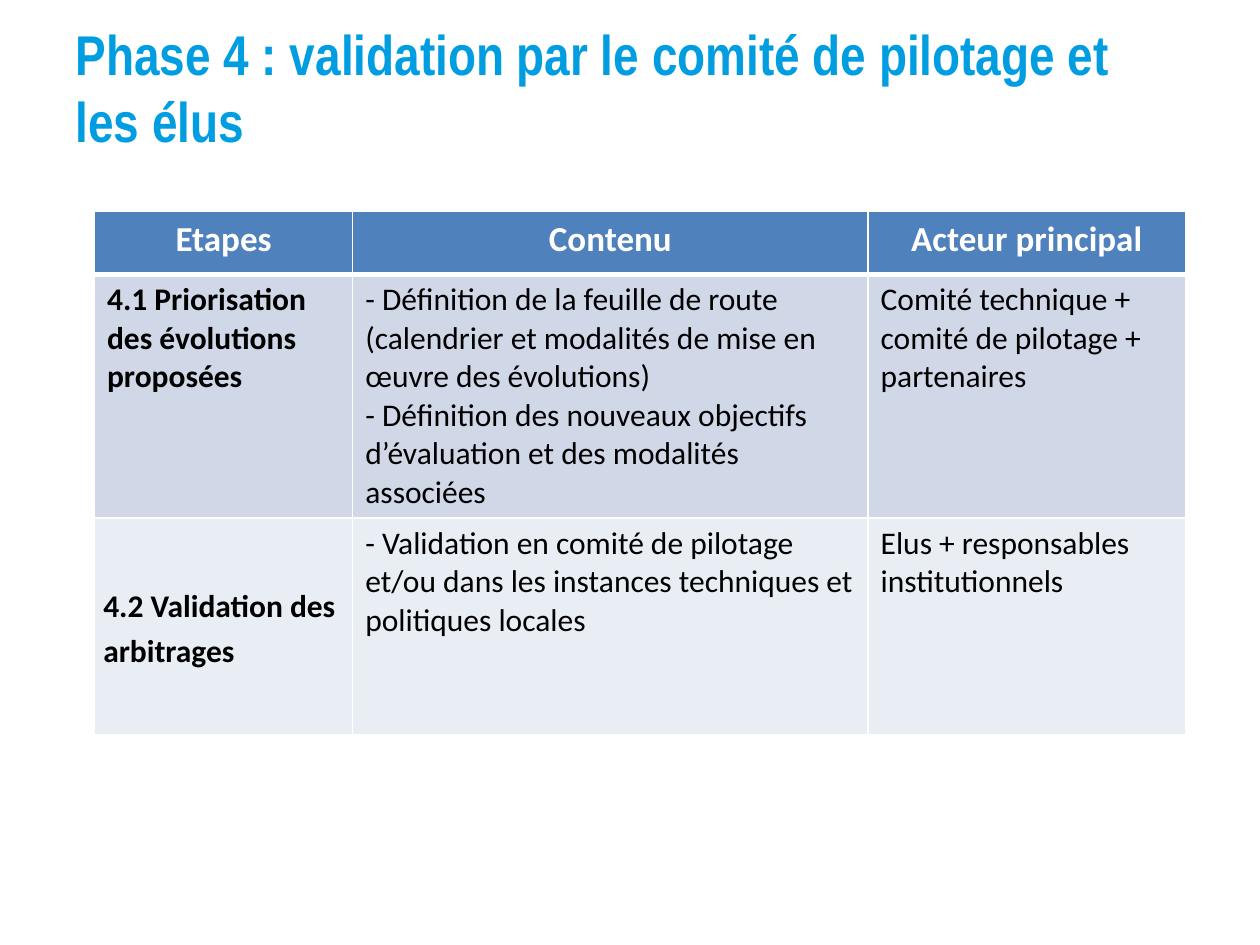
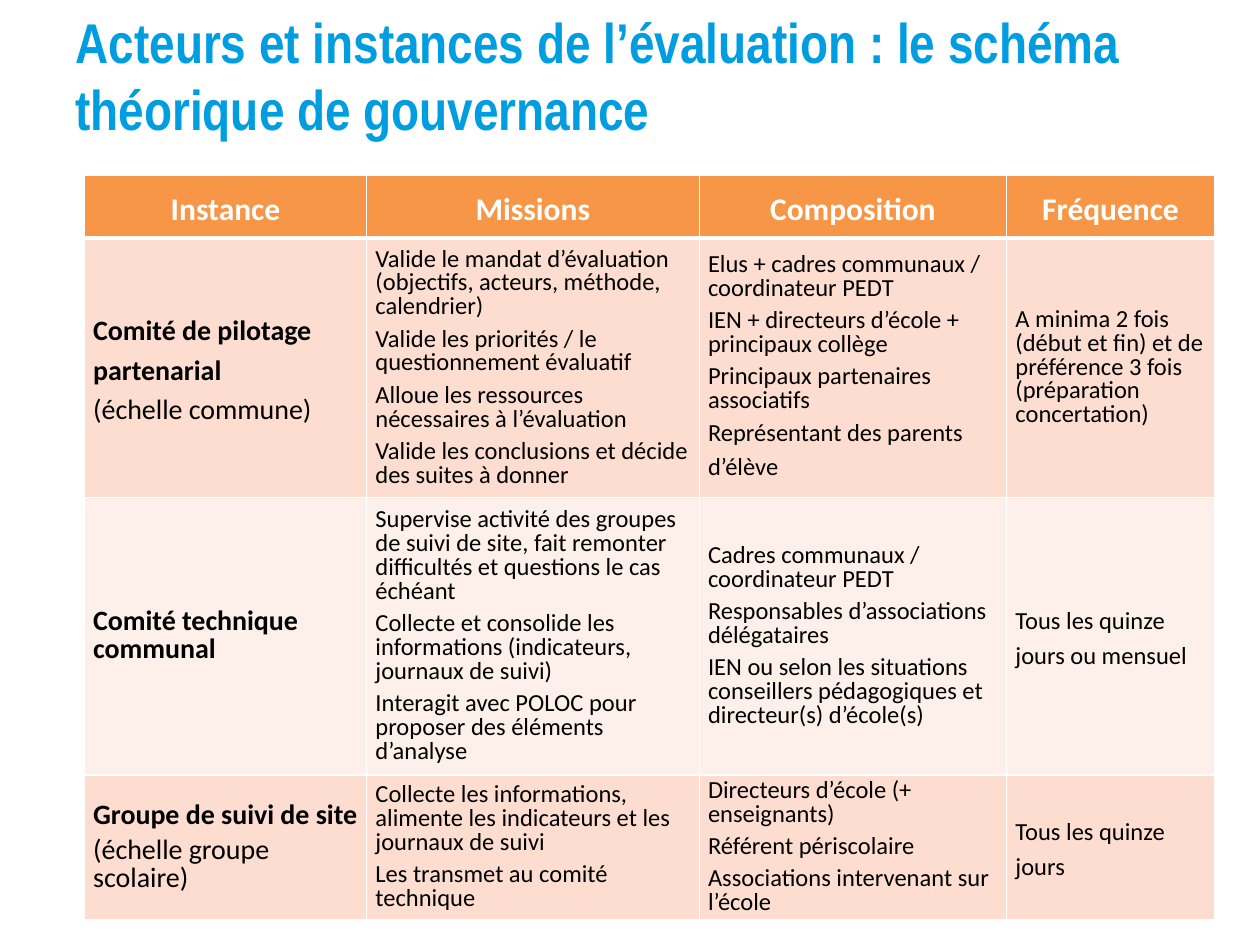
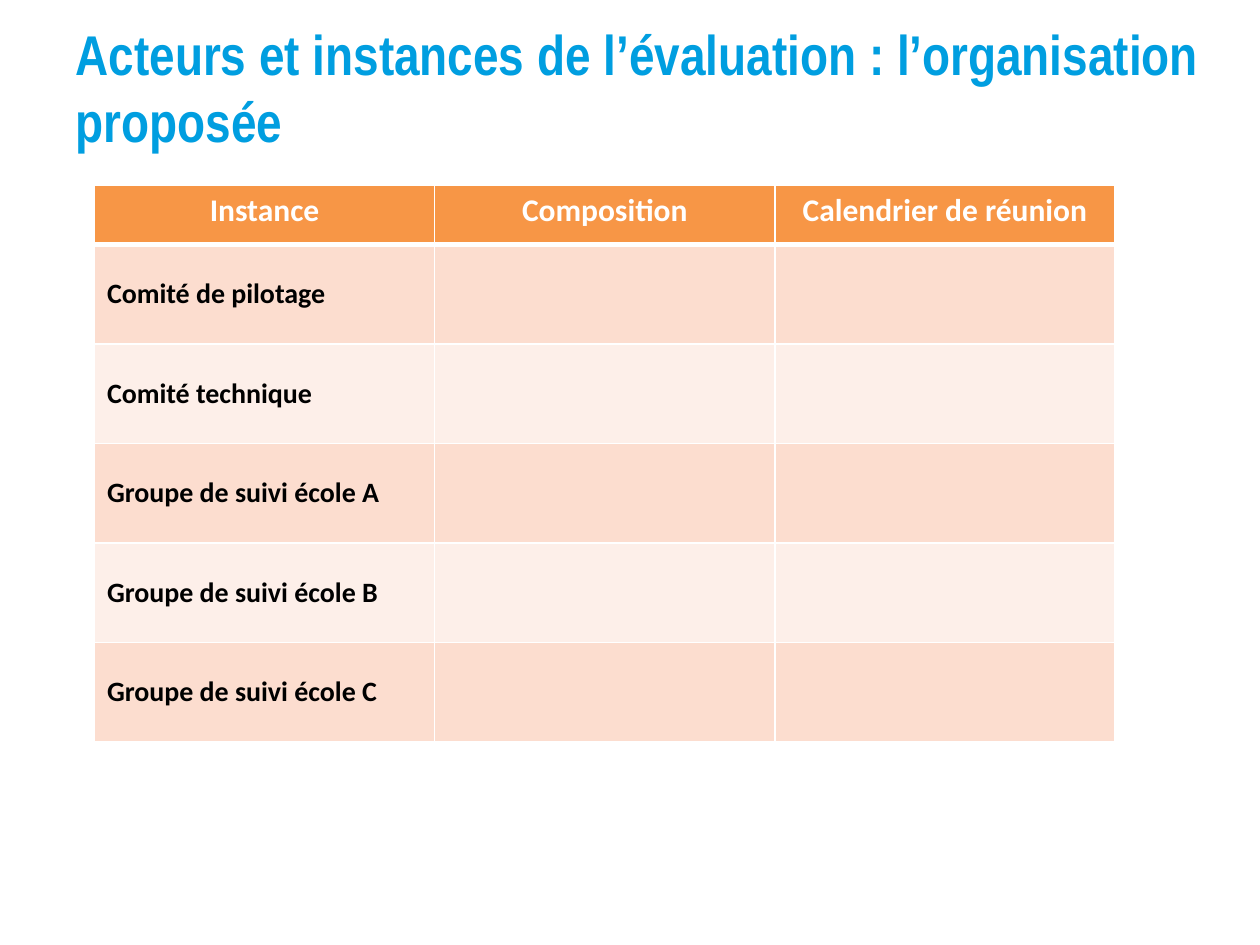
"""Build three slides on the governance of an evaluation, each a title over a banded table."""

from dataclasses import dataclass

from lxml.etree import SubElement
from pptx import Presentation
from pptx.dml.color import RGBColor
from pptx.enum.text import MSO_ANCHOR as Anchor, MSO_AUTO_SIZE as AutoSize, PP_ALIGN as Align
from pptx.oxml.ns import qn
from pptx.util import Inches, Pt


@dataclass(frozen=True)
class Palette:
    header: str
    bands: tuple[str, str]


@dataclass(frozen=True)
class Theme:
    title_font: str = "Arial Narrow"
    body_font: str = "Calibri"
    title_color: str = "009EE0"
    text: str = "000000"
    white: str = "FFFFFF"
    title_size: int = 32
    large: int = 20
    medium: int = 18
    label: int = 16
    small: int = 14
    rule: float = 1
    header_rule: float = 3
    blue: Palette = Palette("4F81BD", ("D0D8E8", "E9EDF4"))
    orange: Palette = Palette("F79646", ("FCDDCF", "FDEFE9"))


THEME = Theme()


@dataclass(frozen=True)
class Spacing:
    line: float = 1.0
    before: float = 0


PLAIN = Spacing()
OPEN = Spacing(1.15)
DENSE = Spacing(0.8, 4.8)


@dataclass(frozen=True)
class Para:
    text: str
    size: int
    bold: bool = False
    spacing: Spacing = PLAIN


@dataclass(frozen=True)
class Cell:
    paras: tuple[Para, ...] = ()
    middle: bool = False
    narrow: bool = False


@dataclass(frozen=True)
class TableSlide:
    title: str
    title_top: float
    title_width: float
    left: float
    top: float
    cols: tuple[float, ...]
    heights: tuple[float, ...]
    palette: Palette
    header: tuple[Cell, ...]
    body: tuple[tuple[Cell, ...], ...]


def plain(*texts: str, bold: bool = False) -> Cell:
    """Return a top-anchored cell of medium text."""
    return Cell(tuple(Para(t, THEME.medium, bold) for t in texts))


def tight(*paras: Para) -> Cell:
    """Return a middle-anchored cell with narrow insets."""
    return Cell(paras, middle=True, narrow=True)


def small(text: str, spacing: Spacing = DENSE) -> Para:
    """Return a paragraph of small text."""
    return Para(text, THEME.small, spacing=spacing)


def dense(*texts: str) -> Cell:
    """Return a tight cell of small, closely set paragraphs."""
    return tight(*(small(t) for t in texts))


def label(text: str, spacing: Spacing, bold: bool = True) -> Para:
    """Return a row-label paragraph."""
    return Para(text, THEME.label, bold, spacing)


SLIDES = (
    TableSlide(
        title="Phase 4 : validation par le comité de pilotage et les élus",
        title_top=0.06, title_width=9, left=0.75, top=1.68,
        cols=(2.05, 4.09, 2.52), heights=(0.5, 1.9, 1.72), palette=THEME.blue,
        header=tuple(Cell((Para(t, THEME.large, True),))
                     for t in ("Etapes", "Contenu", "Acteur principal")),
        body=(
            (plain("4.1 Priorisation des évolutions proposées", bold=True),
             plain("- Définition de la feuille de route (calendrier et modalités de mise en "
                   "œuvre des évolutions)",
                   "- Définition des nouveaux objectifs d’évaluation et des modalités associées"),
             plain("Comité technique + comité de pilotage + partenaires")),
            (tight(Para("4.2 Validation des arbitrages", THEME.medium, True, OPEN)),
             plain("- Validation en comité de pilotage et/ou dans les instances techniques et "
                   "politiques locales"),
             plain("Elus + responsables institutionnels")),
        ),
    ),
    TableSlide(
        title="Acteurs et instances de l’évaluation : le schéma théorique de gouvernance",
        title_top=-0.03, title_width=9, left=0.67, top=1.39,
        cols=(2.24, 2.64, 2.44, 1.65), heights=(0.5, 2.06, 2.2, 1.15), palette=THEME.orange,
        header=tuple(tight(Para(t, THEME.medium, True, OPEN))
                     for t in ("Instance", "Missions", "Composition", "Fréquence")),
        body=(
            (tight(label("Comité de pilotage partenarial", OPEN),
                   label("(échelle commune)", OPEN, bold=False)),
             dense("Valide le mandat d’évaluation (objectifs, acteurs, méthode, calendrier)",
                   "Valide les priorités / le questionnement évaluatif",
                   "Alloue les ressources nécessaires à l’évaluation",
                   "Valide les conclusions et décide des suites à donner"),
             tight(small("Elus + cadres communaux / coordinateur PEDT"),
                   small("IEN + directeurs d’école + principaux collège"),
                   small("Principaux partenaires associatifs"),
                   small("Représentant des parents d’élève", OPEN)),
             dense("A minima 2 fois (début et fin) et de préférence 3 fois "
                   "(préparation concertation)")),
            (tight(label("Comité technique communal", DENSE)),
             dense("Supervise activité des groupes de suivi de site, fait remonter difficultés "
                   "et questions le cas échéant",
                   "Collecte et consolide les informations (indicateurs, journaux de suivi)",
                   "Interagit avec POLOC pour proposer des éléments d’analyse"),
             dense("Cadres communaux / coordinateur PEDT",
                   "Responsables d’associations délégataires",
                   "IEN ou selon les situations conseillers pédagogiques et "
                   "directeur(s) d’école(s)"),
             tight(small("Tous les quinze jours ou mensuel", OPEN))),
            (tight(label("Groupe de suivi de site", DENSE),
                   label("(échelle groupe scolaire)", DENSE, bold=False)),
             dense("Collecte les informations, alimente les indicateurs et les journaux de suivi",
                   "Les transmet au comité technique"),
             dense("Directeurs d’école (+ enseignants)", "Référent périscolaire",
                   "Associations intervenant sur l’école"),
             tight(small("Tous les quinze jours", OPEN))),
        ),
    ),
    TableSlide(
        title="Acteurs et instances de l’évaluation : l’organisation proposée",
        title_top=0.06, title_width=9.5, left=0.75, top=1.47,
        cols=(2.7,) * 3, heights=(0.47,) + (0.79,) * 5, palette=THEME.orange,
        header=tuple(plain(t, bold=True)
                     for t in ("Instance", "Composition", "Calendrier de réunion")),
        body=tuple((Cell((label(t, PLAIN),), middle=True), Cell(), Cell())
                   for t in ("Comité de pilotage", "Comité technique", "Groupe de suivi école A",
                             "Groupe de suivi école B", "Groupe de suivi école C")),
    ),
)


def set_borders(cell, row: int) -> None:
    """Draw white cell borders, thicker between the header and the body."""
    tc_pr = cell._tc.get_or_add_tcPr()
    heavy = {0: "lnB", 1: "lnT"}.get(row)
    for side in ("lnL", "lnR", "lnT", "lnB"):
        width = THEME.header_rule if side == heavy else THEME.rule
        ln = SubElement(tc_pr, qn(f"a:{side}"), w=str(Pt(width)))
        SubElement(SubElement(ln, qn("a:solidFill")), qn("a:srgbClr"), val=THEME.white)


def format_font(font, name: str, size: int, color: str, bold: bool) -> None:
    """Set the face, size, colour and weight of a font."""
    font.name, font.size, font.bold = name, Pt(size), bold
    font.color.rgb = RGBColor.from_string(color)


def fill_cell(cell, content: Cell, row: int, palette: Palette) -> None:
    """Fill, frame and write one table cell."""
    is_header = row == 0
    set_borders(cell, row)
    cell.fill.solid()
    background = palette.header if is_header else palette.bands[(row - 1) % 2]
    cell.fill.fore_color.rgb = RGBColor.from_string(background)
    cell.vertical_anchor = Anchor.MIDDLE if content.middle else Anchor.TOP
    if content.narrow:
        cell.margin_left = cell.margin_right = Inches(0.07)
        cell.margin_top = cell.margin_bottom = 0
    tf = cell.text_frame
    for i, para in enumerate(content.paras):
        p = tf.add_paragraph() if i else tf.paragraphs[0]
        p.text = para.text
        p.alignment = Align.CENTER if is_header else Align.LEFT
        p.line_spacing = para.spacing.line
        if i:
            p.space_before = Pt(para.spacing.before)
        color = THEME.white if is_header else THEME.text
        format_font(p.runs[0].font, THEME.body_font, para.size, color, para.bold)


def add_title(s, spec_: TableSlide) -> None:
    """Place and format the slide title."""
    sp = s.shapes.title
    sp.left, sp.top = Inches(0.5), Inches(spec_.title_top)
    sp.width, sp.height = Inches(spec_.title_width), Inches(1.25)
    tf = sp.text_frame
    tf.text = spec_.title
    tf.word_wrap, tf.auto_size = True, AutoSize.NONE
    tf.vertical_anchor = Anchor.MIDDLE
    p = tf.paragraphs[0]
    p.alignment = Align.LEFT
    format_font(p.runs[0].font, THEME.title_font, THEME.title_size, THEME.title_color, True)


def add_grid(s, spec_: TableSlide) -> None:
    """Add the banded table of a slide."""
    rows = (spec_.header, *spec_.body)
    table = s.shapes.add_table(
        len(rows), len(spec_.cols), Inches(spec_.left), Inches(spec_.top),
        Inches(sum(spec_.cols)), Inches(sum(spec_.heights))).table
    for column, width in zip(table.columns, spec_.cols):
        column.width = Inches(width)
    for r, (contents, height) in enumerate(zip(rows, spec_.heights)):
        table.rows[r].height = Inches(height)
        for c, content in enumerate(contents):
            fill_cell(table.cell(r, c), content, r, spec_.palette)


def main() -> None:
    """Build and save the presentation."""
    prs = Presentation()
    prs.slide_width, prs.slide_height = Inches(10), Inches(7.5)
    title_only = prs.slide_layouts.get_by_name("Title Only")
    for table_slide in SLIDES:
        s = prs.slides.add_slide(title_only)
        add_title(s, table_slide)
        add_grid(s, table_slide)
    prs.save("out.pptx")


if __name__ == "__main__":
    main()
